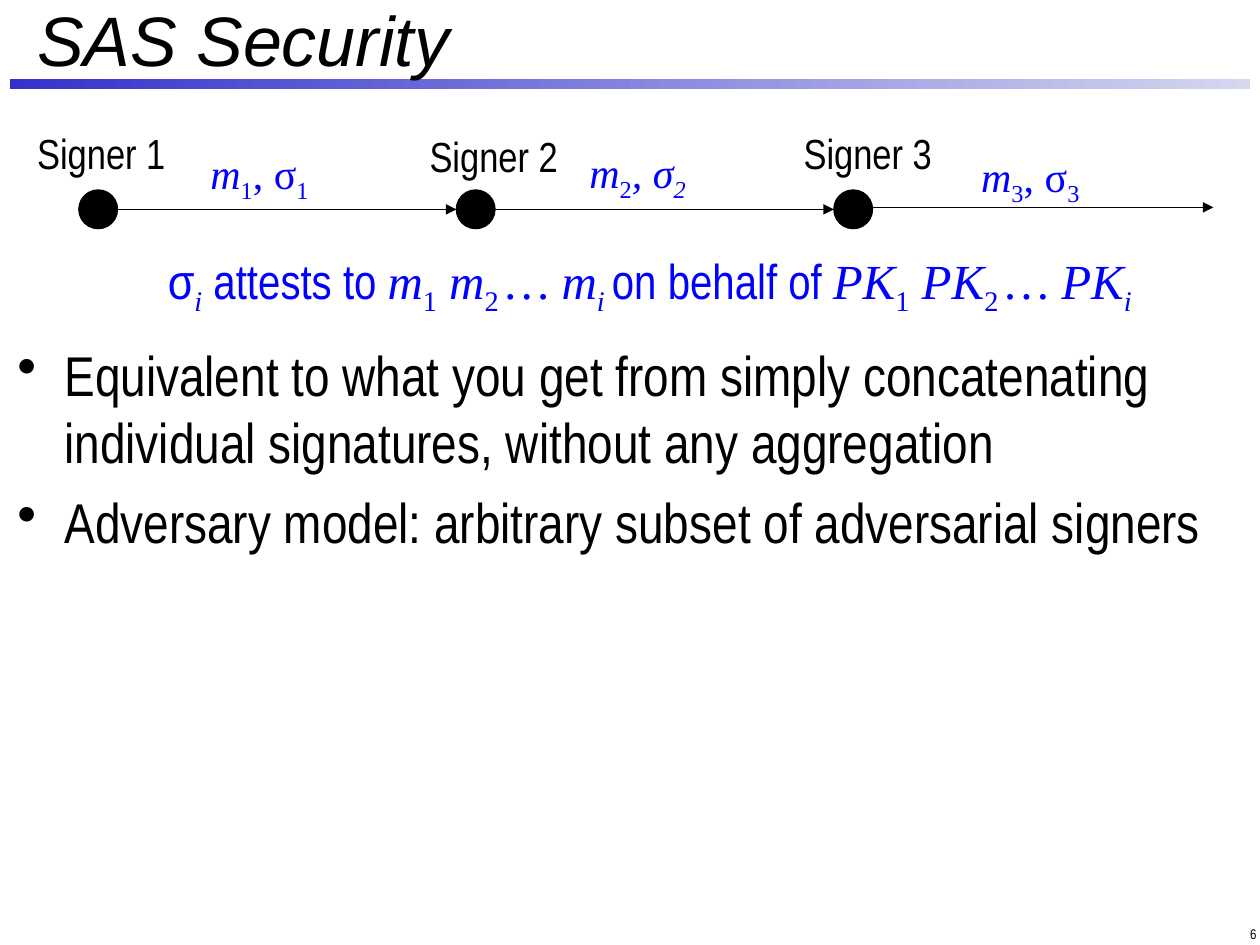
from lxml import etree
from pptx import Presentation
from pptx.dml.color import RGBColor
from pptx.enum.shapes import MSO_CONNECTOR, MSO_SHAPE
from pptx.enum.text import MSO_ANCHOR, PP_ALIGN
from pptx.oxml.ns import qn
from pptx.util import Cm, Pt

STRAIGHT = MSO_CONNECTOR.STRAIGHT
RECTANGLE, OVAL = MSO_SHAPE.RECTANGLE, MSO_SHAPE.OVAL
MIDDLE, TOP = MSO_ANCHOR.MIDDLE, MSO_ANCHOR.TOP
LEFT, CENTER, RIGHT = PP_ALIGN.LEFT, PP_ALIGN.CENTER, PP_ALIGN.RIGHT

COLORS = {"black": "000000", "blue": "0000FF", "bar start": "3333CC", "bar end": "D6D6EF"}
COLORS = {name: RGBColor.from_string(value) for name, value in COLORS.items()}
NARROW, SERIF = "Arial Narrow", "Times New Roman"

# Run styles: font, italic, subscript
STYLES = {
    "words": (NARROW, False, False),
    "variable": (SERIF, True, False),
    "symbol": (SERIF, False, False),
    "index": (SERIF, False, True),
    "italic index": (SERIF, True, True),
}


def add_text(left, top, width, height, lines, size, font=NARROW, align=LEFT, anchor=TOP):
    """Add a text box with one paragraph per line and return its paragraphs."""
    box = slide.shapes.add_textbox(Cm(left), Cm(top), Cm(width), Cm(height))
    frame = box.text_frame
    frame.word_wrap = True
    frame.vertical_anchor = anchor
    frame.text = "\n".join(lines)
    for paragraph in frame.paragraphs:
        paragraph.alignment = align
        paragraph.font.size = Pt(size)
        paragraph.font.name = font
        paragraph.font.color.rgb = COLORS["black"]
    return frame.paragraphs


def add_formula(left, top, width, height, parts, size, align=LEFT):
    """Add a blue text box from (text, style name) parts."""
    paragraph = add_text(left, top, width, height, [""], size, align=align)[0]
    for text, style in parts:
        run = paragraph.add_run()
        run.text = text
        run.font.size = Pt(size)
        run.font.color.rgb = COLORS["blue"]
        run.font.name, run.font.italic, subscript = STYLES[style]
        if subscript:
            run.font._element.set("baseline", "-25000")


presentation = Presentation()
presentation.slide_width, presentation.slide_height = Cm(25.4), Cm(19.05)
slide = presentation.slides.add_slide(presentation.slide_layouts[6])

# Title bar, page number and title
bar = slide.shapes.add_shape(RECTANGLE, Cm(0.2), Cm(1.6), Cm(25), Cm(0.2))
bar.shadow.inherit = False
bar.line.fill.background()
bar.fill.gradient()
bar.fill.gradient_angle = 0
for stop, name in zip(bar.fill.gradient_stops, ("bar start", "bar end")):
    stop.color.rgb = COLORS[name]

add_text(20.3, 18.19, 5.28, 1.27, ["6"], 8, align=RIGHT, anchor=MIDDLE)
title = add_text(0.5, 0.18, 22.76, 1.2, ["SAS Security"], 40, "Arial", anchor=MIDDLE)[0]
title.font.italic = True

# Chain of signers, each passing a message and signature along an arrow
DOT = 0.78
DOT_TOP = 3.83
# dot left, label left and top, message left and top, arrow end and height, sigma style
signers = [
    (1.59, 0.5, 2.44, 3.99, 2.84, 9.2, 4.22, "symbol", "index"),
    (9.2, 8.41, 2.51, 11.63, 2.82, 16.81, 4.22, "variable", "italic index"),
    (16.81, 15.95, 2.44, 19.53, 2.9, 24.46, 4.18, "symbol", "index"),
]
for number, signer in enumerate(signers, 1):
    (dot_left, label_left, label_top, message_left, message_top,
     arrow_end, arrow_y, sigma_style, index_style) = signer
    dot = slide.shapes.add_shape(OVAL, Cm(dot_left), Cm(DOT_TOP), Cm(DOT), Cm(DOT))
    dot.shadow.inherit = False
    dot.fill.solid()
    dot.fill.fore_color.rgb = COLORS["black"]
    dot.line.color.rgb = COLORS["black"]
    dot.line.width = Pt(0.75)

    add_text(label_left, label_top, 4.19, 1.27, [f"Signer {number}"], 24)
    message = [("m", "variable"), (str(number), "index"),
               (", σ", sigma_style), (str(number), index_style)]
    add_formula(message_left, message_top, 4.4, 1.27, message, 24)

    arrow = slide.shapes.add_connector(
        STRAIGHT, Cm(dot_left + DOT), Cm(arrow_y), Cm(arrow_end), Cm(arrow_y))
    arrow.line.color.rgb = COLORS["black"]
    arrow.line.width = Pt(0.75)
    etree.SubElement(arrow.line._get_or_add_ln(), qn("a:tailEnd"), type="triangle")
    etree.SubElement(arrow._element.spPr, qn("a:effectLst"))

# What the signature attests to
statement = [("σ", "words"), ("i", "italic index")]
for words, variable in ((" attests to ", "m"), ("on behalf of ", "PK")):
    statement += [
        (words, "words"), (variable, "variable"), ("1", "index"),
        (f" {variable}", "variable"), ("2 ", "index"),
        (f"… {variable}", "variable"), ("i ", "italic index"),
    ]
add_formula(1.6, 4.93, 23.14, 1.45, statement, 28, CENTER)

# Bullets
bullets = add_text(0.1, 6.73, 25.48, 4.06, [
    "Equivalent to what you get from simply concatenating individual signatures, "
    "without any aggregation",
    "Adversary model: arbitrary subset of adversarial signers",
], 32)
for paragraph in bullets:
    paragraph.space_before = Pt(7.4)
    properties = paragraph._p.get_or_add_pPr()
    properties.set("marL", str(Cm(0.95)))
    properties.set("indent", str(Cm(-0.95)))
    bullet = etree.Element(qn("a:buChar"), char="•")
    properties.find(qn("a:defRPr")).addprevious(bullet)

presentation.save("out.pptx")
